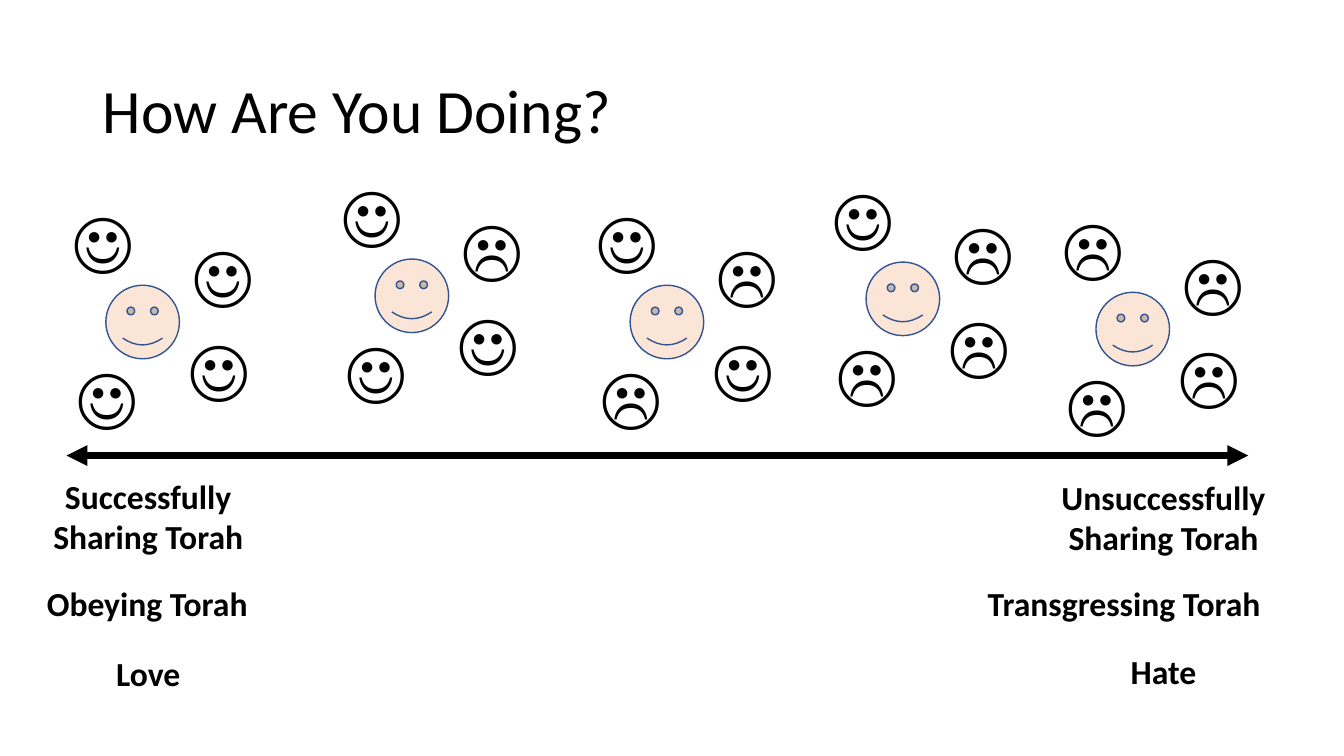
from lxml.etree import SubElement
from pptx import Presentation
from pptx.dml.color import RGBColor
from pptx.enum.shapes import MSO_CONNECTOR, MSO_SHAPE
from pptx.enum.text import MSO_ANCHOR, MSO_AUTO_SIZE, PP_ALIGN
from pptx.oxml.ns import qn
from pptx.util import Pt

PX = 9144  # 100 px to the inch
BLACK = RGBColor(0x00, 0x00, 0x00)
SKIN = RGBColor(0xFB, 0xE5, 0xD6)
OUTLINE = RGBColor(0x32, 0x54, 0x91)

FACE_SIZE = 73
# Friends around a face: upper left, upper right, lower left, lower right
FRIEND_OFFSETS = [(-43, -91), (76, -57), (-39, 64), (72, 36)]
GROUPS = [
    (105, 283, "☺☺☺☺"),
    (372, 257, "☺☹☺☺"),
    (625, 283, "☺☹☹☺"),
    (859, 260, "☺☹☹☹"),
    (1087, 290, "☹☹☹☹"),
]
LABELS = [
    (33, 467, 228, 91, "Successfully\nSharing Torah"),
    (1040, 468, 228, 91, "Unsuccessfully\nSharing Torah"),
    (32, 573, 228, 50, "Obeying Torah"),
    (962, 573, 306, 50, "Transgressing Torah"),
    (33, 643, 228, 50, "Love"),
    (1040, 641, 228, 50, "Hate"),
]


class SlideBuilder:
    font = "Calibri"

    def __init__(self, slide):
        self.slide = slide

    def style(self, span, size, bold=False):
        span.font.name = self.font
        span.font.size = Pt(size)
        span.font.bold = bold
        span.font.color.rgb = BLACK

    def title(self, left, top, width, height, text):
        box = self.slide.shapes.title
        box.left, box.top, box.width, box.height = (
            n * PX for n in (left, top, width, height))
        frame = box.text_frame
        frame.text = text
        frame.vertical_anchor = MSO_ANCHOR.MIDDLE
        para = frame.paragraphs[0]
        para.alignment = PP_ALIGN.LEFT
        para.line_spacing = 0.9
        self.style(para.runs[0], 44)

    def text(self, left, top, width, height, text, size, bold=False):
        box = self.slide.shapes.add_textbox(
            left * PX, top * PX, width * PX, height * PX)
        frame = box.text_frame
        frame.word_wrap = True
        frame.auto_size = MSO_AUTO_SIZE.SHAPE_TO_FIT_TEXT
        frame.text = text
        for para in frame.paragraphs:
            para.alignment = PP_ALIGN.CENTER
            self.style(para.runs[0], size, bold)
        return box

    def friend(self, left, top, symbol):
        box = self.text(left, top, 79, 91, symbol, 48)
        space = box.text_frame.paragraphs[0].add_run()
        space.text = " "
        self.style(space, 18)

    def face(self, left, top):
        face = self.slide.shapes.add_shape(
            MSO_SHAPE.SMILEY_FACE, left * PX, top * PX,
            FACE_SIZE * PX, FACE_SIZE * PX)
        face.shadow.inherit = False
        face.fill.solid()
        face.fill.fore_color.rgb = SKIN
        face.line.color.rgb = OUTLINE
        face.line.width = Pt(1)

    def double_arrow(self, left, right, y, width):
        arrow = self.slide.shapes.add_connector(
            MSO_CONNECTOR.STRAIGHT, left * PX, y * PX, right * PX, y * PX)
        arrow.line.color.rgb = BLACK
        arrow.line.width = Pt(width)
        line = arrow.line._get_or_add_ln()
        for end in ("a:headEnd", "a:tailEnd"):
            SubElement(line, qn(end), type="triangle")
        SubElement(arrow._element.spPr, qn("a:effectLst"))


def main():
    deck = Presentation()
    deck.slide_width, deck.slide_height = 1333 * PX, 750 * PX
    page = SlideBuilder(deck.slides.add_slide(deck.slide_layouts[5]))

    page.title(92, 40, 1150, 145, "How Are You Doing?")

    # Five faces, each among four friends
    for left, top, moods in GROUPS:
        page.face(left, top)
        for (dx, dy), symbol in zip(FRIEND_OFFSETS, moods):
            page.friend(left + dx, top + dy, symbol)

    # Scale from success to failure
    page.double_arrow(66, 1238, 452, 5)
    for left, top, width, height, text in LABELS:
        page.text(left, top, width, height, text, 24, bold=True)

    deck.save("out.pptx")


if __name__ == "__main__":
    main()
